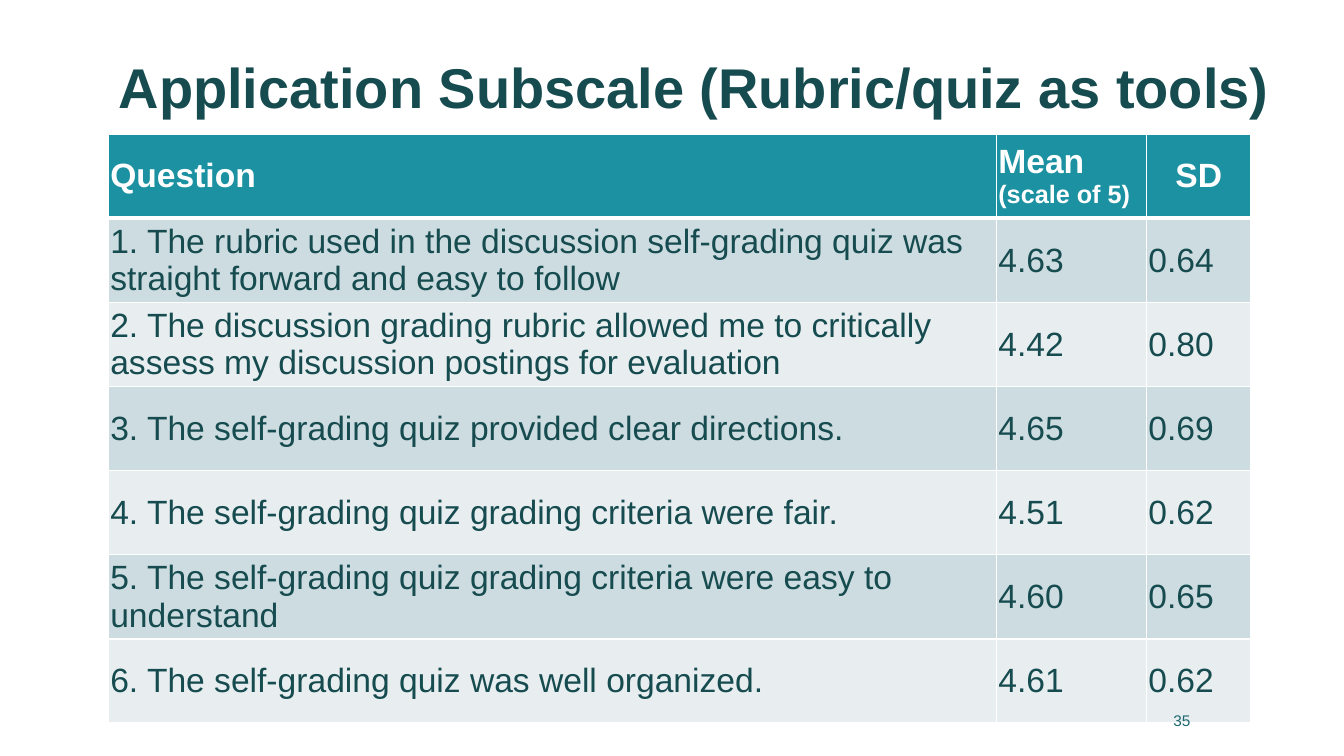
from lxml import etree
from pptx import Presentation
from pptx import util as u
from pptx.dml.color import RGBColor
from pptx.enum import text
from pptx.oxml.ns import qn

DARK_TEAL = RGBColor(0x16, 0x4B, 0x4F)
NUMBER_TEAL = RGBColor(0x1F, 0x69, 0x6F)
HEADER_TEAL = RGBColor(0x1B, 0x91, 0xA1)
BAND_DARK = RGBColor(0xCD, 0xDC, 0xE0)
BAND_LIGHT = RGBColor(0xE8, 0xEE, 0xF0)
WHITE = RGBColor(0xFF, 0xFF, 0xFF)

COLUMN_WIDTHS = (22.38, 3.78, 2.62)
ROW_HEIGHT = 2.12
ROWS = (
    ("Question", "Mean\n(scale of 5)", "SD"),
    ("1. The rubric used in the discussion self-grading quiz was straight forward and easy to follow",
     "4.63", "0.64"),
    ("2. The discussion grading rubric allowed me to critically assess my discussion postings for evaluation",
     "4.42", "0.80"),
    ("3. The self-grading quiz provided clear directions.", "4.65", "0.69"),
    ("4. The self-grading quiz grading criteria were fair.", "4.51", "0.62"),
    ("5. The self-grading quiz grading criteria were easy to understand", "4.60", "0.65"),
    ("6. The self-grading quiz was well organized.", "4.61", "0.62"),
)


def set_values(target, values):
    """Set each named attribute of the target."""
    for name, value in values.items():
        setattr(target, name, value)


def format_para(para, size, color, bold=False, align=text.PP_ALIGN.LEFT):
    """Format a paragraph and its runs."""
    para.alignment = align
    for span in para.runs:
        set_values(span.font, {"name": "Arial", "size": u.Pt(size), "bold": bold})
        span.font.color.rgb = color


def place(box, left, top, width, height):
    """Place a box with lengths in centimetres."""
    set_values(box, {"left": u.Cm(left), "top": u.Cm(top),
                     "width": u.Cm(width), "height": u.Cm(height)})


def add_title(page, wording):
    """Fill and format the title placeholder."""
    title = page.shapes.title
    place(title, 2.74, 0.2, 30.91, 2.97)
    title.text = wording
    set_values(title.text_frame, {"word_wrap": True, "auto_size": text.MSO_AUTO_SIZE.NONE,
                                  "vertical_anchor": text.MSO_ANCHOR.BOTTOM})
    para = title.text_frame.paragraphs[0]
    para.line_spacing = 0.9
    format_para(para, 40, DARK_TEAL, bold=True)


def add_borders(cell, bottom_width):
    """Draw white lines on the four sides of a cell."""
    properties = cell._tc.get_or_add_tcPr()
    widths = {"a:lnL": 1, "a:lnR": 1, "a:lnT": 1, "a:lnB": bottom_width}
    for position, (tag, width) in enumerate(widths.items()):
        line = etree.Element(qn(tag), w=str(u.Pt(width)))
        fill = etree.SubElement(line, qn("a:solidFill"))
        etree.SubElement(fill, qn("a:srgbClr"), val=str(WHITE))
        properties.insert(position, line)


def fill_cell(cell, wording, fill, color, header, align):
    """Write and format one table cell."""
    cell.text = wording
    set_values(cell, {"margin_left": u.Cm(0.04), "margin_right": u.Cm(0.04),
                      "margin_top": u.Cm(0.03), "margin_bottom": u.Cm(0.03),
                      "vertical_anchor": text.MSO_ANCHOR.MIDDLE})
    cell.fill.solid()
    cell.fill.fore_color.rgb = fill
    for number, para in enumerate(cell.text_frame.paragraphs):
        format_para(para, 18 if number else 24, color, header, align)
    add_borders(cell, 3 if header else 1)


def add_score_table(page):
    """Add the table of questions, means and deviations."""
    table = page.shapes.add_table(
        len(ROWS), len(COLUMN_WIDTHS), u.Cm(2.74), u.Cm(3.38),
        u.Cm(sum(COLUMN_WIDTHS)), u.Cm(ROW_HEIGHT * len(ROWS))).table
    for column, width in zip(table.columns, COLUMN_WIDTHS):
        column.width = u.Cm(width)
    for r, row in enumerate(ROWS):
        table.rows[r].height = u.Cm(ROW_HEIGHT)
        header = r == 0
        fill = HEADER_TEAL if header else BAND_DARK if r % 2 else BAND_LIGHT
        color = WHITE if header else DARK_TEAL
        for c, wording in enumerate(row):
            centred = header and c == len(row) - 1
            align = text.PP_ALIGN.CENTER if centred else text.PP_ALIGN.LEFT
            fill_cell(table.cell(r, c), wording, fill, color, header, align)


def add_page_number(page, number):
    """Add the page number at the lower right."""
    box = page.shapes.add_textbox(u.Cm(22.35), u.Cm(17.65), u.Cm(7.9), u.Cm(1.02))
    set_values(box.text_frame, {"text": number, "word_wrap": True,
                                "vertical_anchor": text.MSO_ANCHOR.MIDDLE})
    format_para(box.text_frame.paragraphs[0], 11, NUMBER_TEAL, align=text.PP_ALIGN.RIGHT)


def main():
    """Build and save the slide."""
    deck = Presentation()
    set_values(deck, {"slide_width": u.Cm(33.87), "slide_height": u.Cm(19.05)})
    page = deck.slides.add_slide(deck.slide_layouts.get_by_name("Title Only"))
    add_title(page, "Application Subscale (Rubric/quiz as tools)")
    add_score_table(page)
    add_page_number(page, "35")
    deck.save("out.pptx")


if __name__ == "__main__":
    main()
